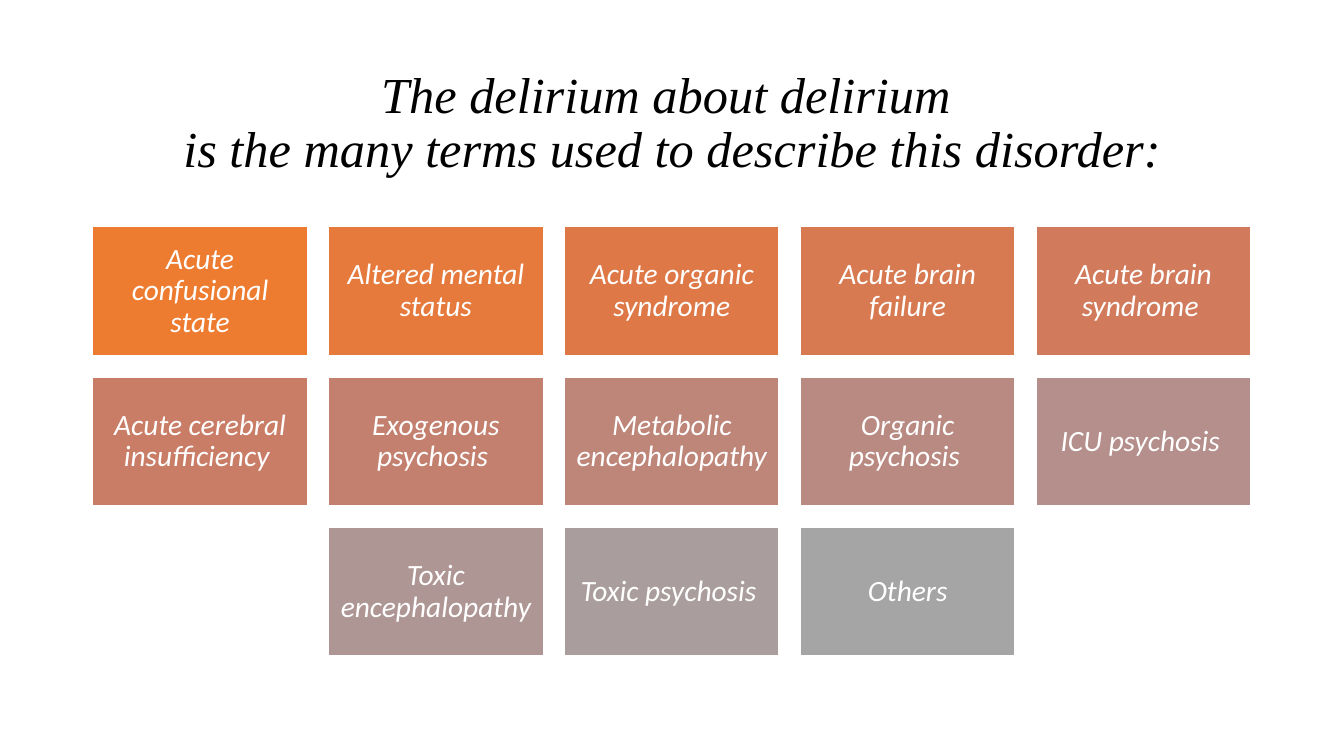
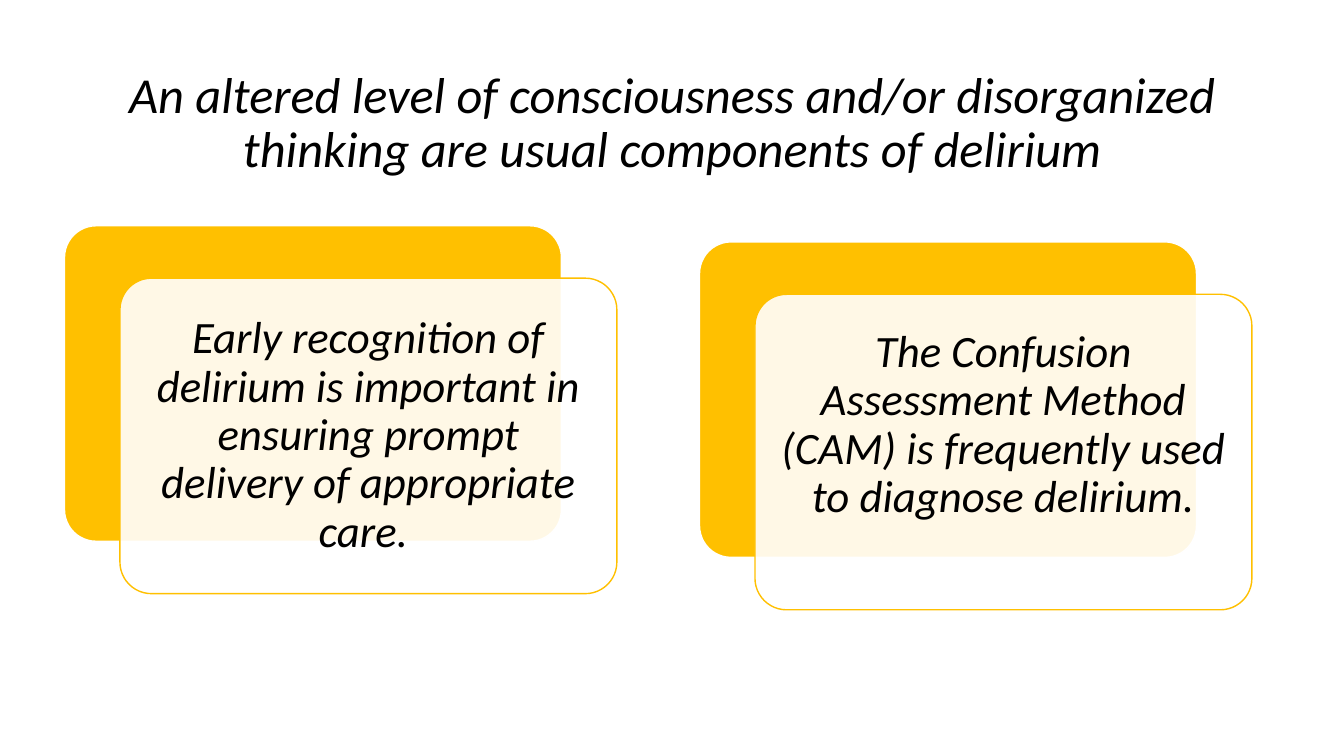
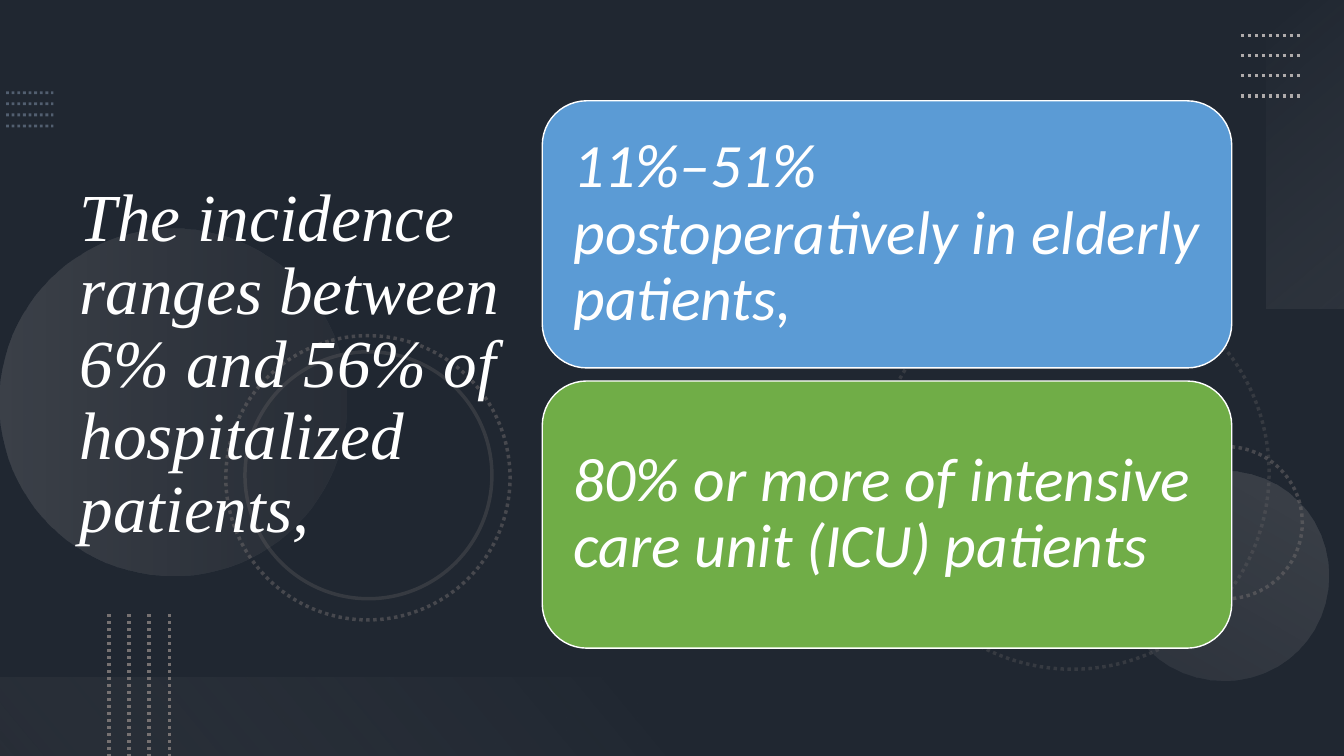
import colorsys

from lxml import etree
from pptx import Presentation
from pptx.dml import color
from pptx.enum import dml, shapes, text
from pptx.oxml import ns
from pptx.util import Pt

SERIF, SANS = "Times New Roman", "Calibri"
WHITE, BLACK, AMBER = "FFFFFF", "000000", "FFC000"
DARK_GREY, LIGHT_GREY = "767171", "AFABAB"
DOTTED = dml.MSO_LINE.ROUND_DOT
RECT = shapes.MSO_SHAPE.RECTANGLE
ROUNDED = shapes.MSO_SHAPE.ROUNDED_RECTANGLE
OVAL = shapes.MSO_SHAPE.OVAL


def paint(fill, *colours, alphas=(), angle=0):
    """Fill with one hex colour, or with a gradient of two; alphas in percent."""
    if len(colours) == 1:
        fill.solid()
        fill.fore_color.rgb = color.RGBColor.from_string(colours[0])
    else:
        fill.gradient()
        fill.gradient_angle = 360 - angle
        for stop, colour in zip(fill.gradient_stops, colours):
            stop.color.rgb = color.RGBColor.from_string(colour)
    nodes = list(fill._xPr.iter(ns.qn("a:srgbClr")))
    for node, alpha in zip(nodes, alphas):
        etree.SubElement(node, ns.qn("a:alpha")).set("val", str(alpha * 1000))


def write(box, words, size, font=SANS, colour=WHITE, align="CENTER", inset=1, lift=0):
    """Write one italic paragraph; inset and lift are in grid cells."""
    frame = box.text_frame
    frame.word_wrap = True
    frame.auto_size = text.MSO_AUTO_SIZE.NONE
    frame.vertical_anchor = text.MSO_ANCHOR.MIDDLE
    frame.margin_left = frame.margin_right = frame.margin_top = round(inset * CELL)
    frame.margin_bottom = round((inset + lift) * CELL)
    para = frame.paragraphs[0]
    para.text = words
    para.alignment = text.PP_ALIGN[align]
    para.line_spacing = 0.9
    para.space_before = para.space_after = Pt(0)
    for span in para.runs:
        span.font.name, span.font.size, span.font.italic = font, Pt(size), True
        paint(span.font.fill, colour)


# Deck: a grid of square cells, 75 rows high
deck = Presentation()
deck.slide_width, deck.slide_height = 12192000, 6858000
CELL = deck.slide_height / 75
COLUMNS, ROWS = deck.slide_width / CELL, 75

# Shared title style and place
title_font = deck.slide_master.element.find(
    ".//" + "/".join(map(ns.qn, ("p:titleStyle", "a:lvl1pPr", "a:defRPr"))))
title_font.set("sz", "3600")
title_font.set("i", "1")
layout = deck.slide_layouts[5]
heading = layout.placeholders[0]
heading.left, heading.top, heading.width, heading.height = [
    round(v * CELL) for v in (9.2, 6.1, 115, 12.4)]

# Slide 1: tiles fading from orange to grey
page = deck.slides.add_slide(layout)
write(page.shapes.title,
      "The delirium about delirium \nis the many terms used to describe this disorder:",
      36, font=SERIF, colour=BLACK)
terms = [
    "Acute confusional state", "Altered mental status", "Acute organic syndrome",
    "Acute brain failure", "Acute brain syndrome ", "Acute cerebral insufficiency ",
    "Exogenous psychosis ", "Metabolic encephalopathy ", "Organic psychosis ",
    "ICU psychosis ", "Toxic encephalopathy ", "Toxic psychosis ", "Others",
]
for index, term in enumerate(terms):
    row, column = divmod(index, 5)
    column += row == 2  # the last row of three is centred
    tile = page.shapes.add_shape(RECT, *[round(v * CELL) for v in (
        9.2 + 23.4 * column, 22.5 + 14.9 * row, 21.3, 12.8)])
    tile.shadow.inherit = False
    share = index / (len(terms) - 1)
    mix = colorsys.hls_to_rgb(0.067 * (1 - share), 0.56 + 0.087 * share, 0.84 * (1 - share))
    paint(tile.fill, "".join(f"{round(part * 255):02X}" for part in mix))
    paint(tile.line.fill, WHITE)
    tile.line.width = Pt(1)
    write(tile, term, 21, inset=0.9)

# Slide 2: two cards, each in front of an amber plate
page = deck.slides.add_slide(layout)
write(page.shapes.title,
      "An altered level of consciousness and/or disorganized thinking "
      "are usual components of delirium", 36, colour=BLACK)
cards = [
    (6.4, 22.4, 0, "Early recognition of delirium is important in ensuring prompt "
                   "delivery of appropriate care. "),
    (69.4, 24, 5.3, "The Confusion Assessment Method (CAM) is frequently used "
                    "to diagnose delirium."),
]
for left, top, lift, words in cards:
    for shift, fill, alpha, edge in ((0, AMBER, 100, WHITE), (1, WHITE, 90, AMBER)):
        card = page.shapes.add_shape(ROUNDED, *[round(v * CELL) for v in (
            left + 5.5 * shift, top + 5.2 * shift, 49.3, 31.3)])
        card.adjustments[0] = 0.1
        card.shadow.inherit = False
        paint(card.fill, fill, alphas=[alpha])
        paint(card.line.fill, edge)
        card.line.width = Pt(1)
    write(card, words, 32, colour=BLACK, inset=1.3, lift=lift)

# Slide 3: dark backdrop
page = deck.slides.add_slide(layout)
paint(page.background.fill, "44546A")

# Veil, discs and corner bands: place, turn, colours, alphas, angle
areas = [
    (RECT, (0, 0, COLUMNS, ROWS), 0, [BLACK], [53], 0),
    (OVAL, (0, 22.7, 34.4, 34.4), 270, [LIGHT_GREY, DARK_GREY], [20, 10], 90),
    (OVAL, (111, 46.7, 20.8, 20.8), 210, [LIGHT_GREY, LIGHT_GREY], [10, 20], 90),
    (RECT, (114.2, 11.4, 30.6, 7.8), 270, ["F5F5F5", LIGHT_GREY], [0, 10], 140),
    (RECT, (0, 67.2, COLUMNS / 2, 7.8), 180, [DARK_GREY, "F1F0F0"], [10, 0], 140),
]
for kind, place, turn, colours, alphas, angle in areas:
    area = page.shapes.add_shape(kind, *[round(v * CELL) for v in place])
    area.rotation = turn
    area.shadow.inherit = False
    paint(area.fill, *colours, alphas=alphas, angle=angle)
    area.line.fill.background()

# Rings: left, top, diameter, turn, alpha, dash
rings = [
    (86.9, 27.4, 39, 75, 25, DOTTED),
    (114.1, 44.3, 15.1, 270, 45, DOTTED),
    (22.4, 33.3, 28.2, 75, 45, DOTTED),
    (24.3, 34.9, 24.5, 75, 25, dml.MSO_LINE.SOLID),
]
for left, top, size, turn, alpha, dash in rings:
    ring = page.shapes.add_shape(OVAL, *[round(v * CELL) for v in (left, top, size, size)])
    ring.rotation = turn
    ring.shadow.inherit = False
    ring.fill.background()
    paint(ring.line.fill, DARK_GREY, alphas=[alpha])
    ring.line.width = Pt(2.5)
    ring.line.dash_style = dash

# Dotted rules in fours: start, length, step, colour, alpha, width
rules = [
    ((0.6, 9.2), (4.7, 0), (0, 1.1), "8497B0", 50, 2),
    ((123.1, 3.5), (6, 0), (0, 2), LIGHT_GREY, 100, 2.5),
    ((10.8, 60.9), (0, 14.1), (2, 0), DARK_GREY, 100, 2.5),
]
for (x, y), (across, down), (step_x, step_y), colour, alpha, width in rules:
    for number in range(4):
        left, top = x + number * step_x, y + number * step_y
        rule = page.shapes.add_connector(shapes.MSO_CONNECTOR.STRAIGHT, *[
            round(v * CELL) for v in (left, top, left + across, top + down)])
        paint(rule.line.fill, colour, alphas=[alpha])
        rule.line.width = Pt(width)
        rule.line.dash_style = DOTTED
        etree.SubElement(rule.element.spPr, ns.qn("a:effectLst"))

# Title at the left, in front of the backdrop
heading = page.shapes.title
heading.left, heading.top, heading.width, heading.height = [
    round(v * CELL) for v in (6.9, 5.4, 45.9, 61.7)]
write(heading, "The incidence ranges between 6% and 56% of hospitalized patients,",
      48, font=SERIF, align="LEFT")
page.shapes.element.append(heading.element)

# Two panels
panels = [
    ("5B9BD5", "11%–51% postoperatively in elderly patients,"),
    ("70AD47", "80% or more of intensive care unit (ICU) patients"),
]
for row, (colour, words) in enumerate(panels):
    panel = page.shapes.add_shape(ROUNDED, *[round(v * CELL) for v in (
        53.8, 10 + 27.8 * row, 68.4, 26.5)])
    panel.shadow.inherit = False
    paint(panel.fill, colour)
    paint(panel.line.fill, WHITE)
    panel.line.width = Pt(1)
    write(panel, words, 44, align="LEFT", inset=1.8)

deck.save("out.pptx")
